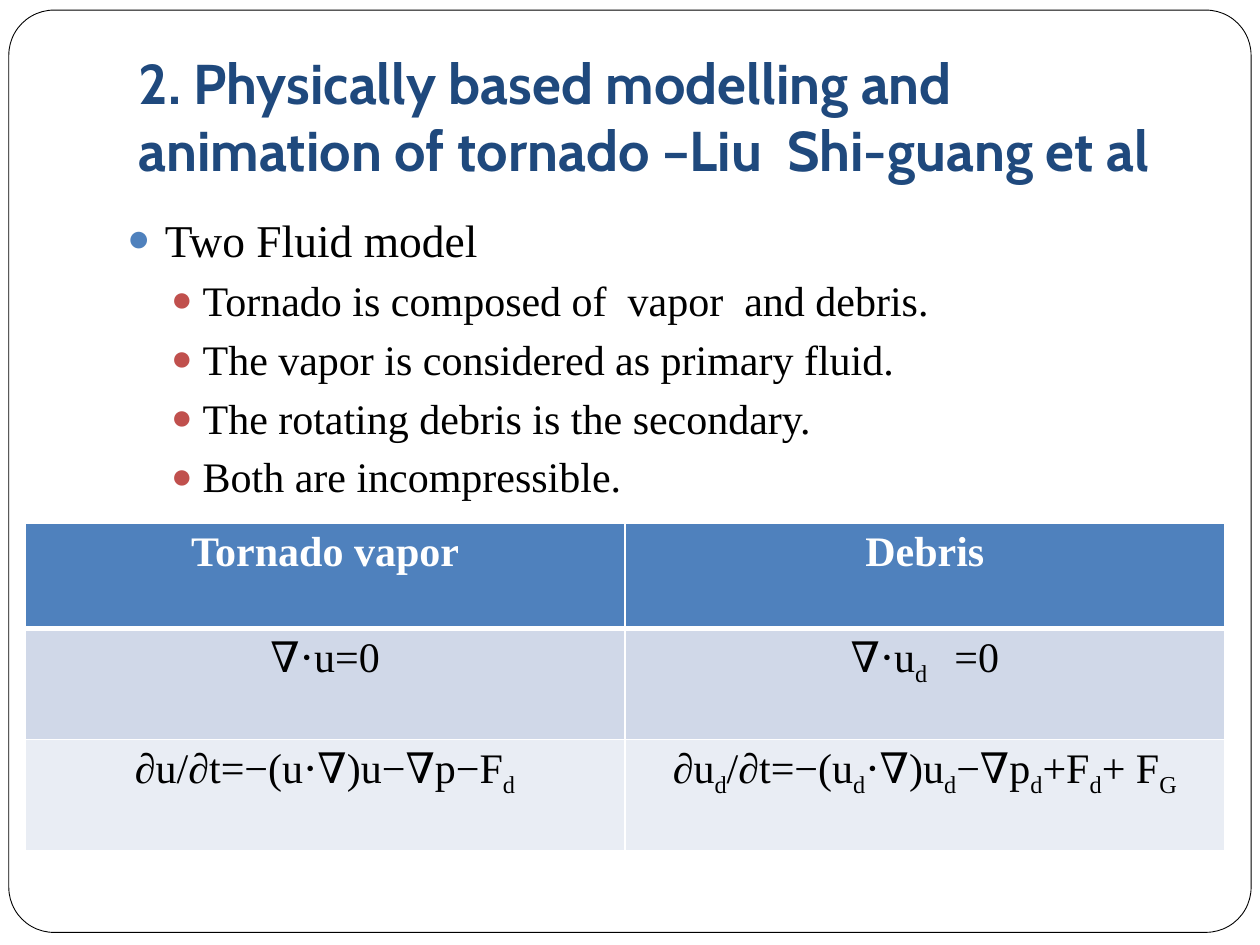
from lxml import etree
from pptx import Presentation
from pptx.dml.color import RGBColor
from pptx.enum.shapes import MSO_SHAPE
from pptx.enum.text import MSO_ANCHOR, PP_ALIGN
from pptx.oxml.ns import qn
from pptx.util import Inches, Pt

ROUND = MSO_SHAPE.ROUNDED_RECTANGLE
BOTTOM = MSO_ANCHOR.BOTTOM
LEFT, CENTER = PP_ALIGN.LEFT, PP_ALIGN.CENTER
HEAD, BODY = "Cabin", "Times New Roman"
COLORS = {
    "navy": "1F497D", "blue": "4F81BD", "red": "C0504D", "pale": "D0D8E8",
    "mist": "E9EDF4", "white": "FFFFFF", "black": "000000",
}

# Content
TITLE = "2. Physically based modelling and animation of tornado –Liu  Shi-guang et al"
POINTS = [
    (0, "Two Fluid model"),
    (1, "Tornado is composed of  vapor  and debris."),
    (1, "The vapor is considered as primary fluid."),
    (1, "The rotating debris is the secondary."),
    (1, "Both are incompressible."),
]
# level: (left indent, hanging indent, size, bullet colour)
LEVELS = [(0.3, 0.3, 26, "blue"), (0.6, 0.25, 24, "red")]
# Every second run of a cell is a subscript
CELLS = [
    [["Tornado vapor"], ["Debris"]],
    [["∇⋅u=0"], ["∇⋅u", "d ", "  =0"]],
    [["∂u/∂t=−(u⋅∇)u−∇p−F", "d"],
     ["∂u", "d", "/∂t=−(u", "d", "⋅∇)u", "d", "−∇p", "d", "+F", "d", "+ F", "G"]],
]
FILLS = ["blue", "pale", "mist"]
ROWS = [0.84, 0.88, 0.88]


def rgb(name):
    return RGBColor.from_string(COLORS[name])


def add_run(para, text, face, size, color, bold=False):
    run = para.add_run()
    run.text = text
    font = run.font
    font.name, font.size, font.bold = face, Pt(size), bold
    font.color.rgb = rgb(color)
    return run


def add_bullet(para, left, hang, color):
    props = para._p.get_or_add_pPr()
    props.set("marL", str(Inches(left)))
    props.set("indent", str(-Inches(hang)))
    tint = etree.SubElement(props, qn("a:buClr"))
    etree.SubElement(tint, qn("a:srgbClr"), val=COLORS[color])
    etree.SubElement(props, qn("a:buSzPct"), val="85000")
    etree.SubElement(props, qn("a:buFont"), typeface=BODY)
    etree.SubElement(props, qn("a:buChar"), char="●")


def set_edges(cell, low):
    props = cell._tc.get_or_add_tcPr()
    widths = [("lnL", 1), ("lnR", 1), ("lnT", 1), ("lnB", low)]
    for spot, (tag, width) in enumerate(widths):
        line = etree.Element(qn(f"a:{tag}"), w=str(Pt(width)))
        fill = etree.SubElement(line, qn("a:solidFill"))
        etree.SubElement(fill, qn("a:srgbClr"), val=COLORS["white"])
        props.insert(spot, line)


deck = Presentation()
deck.slide_width, deck.slide_height = Inches(10), Inches(7.5)
slide = deck.slides.add_slide(deck.slide_layouts[5])
shapes = slide.shapes

# Rounded frame, behind the title
frame = shapes.add_shape(ROUND, Inches(0.07), Inches(0.08), Inches(9.86), Inches(7.32))
frame.adjustments[0] = 0.049
frame.shadow.inherit = False
frame.fill.solid()
frame.fill.fore_color.rgb = rgb("white")
frame.line.color.rgb = rgb("black")
frame.line.width = Pt(0.5)
shapes.title._element.addprevious(frame._element)

# Title
title = shapes.title
title.left, title.top = Inches(1), Inches(0.3)
title.width, title.height = Inches(8.5), Inches(1.25)
text = title.text_frame
text.word_wrap = True
text.vertical_anchor = BOTTOM
text.margin_bottom = Inches(0.1)
text.paragraphs[0].alignment = LEFT
add_run(text.paragraphs[0], TITLE, HEAD, 32, "navy", True)

# Bullet list
box = shapes.add_textbox(Inches(0.91), Inches(1.63), Inches(8.59), Inches(2.35))
text = box.text_frame
text.word_wrap = True
for i, (level, words) in enumerate(POINTS):
    para = text.add_paragraph() if i else text.paragraphs[0]
    left, hang, size, color = LEVELS[level]
    para.level = level
    add_bullet(para, left, hang, color)
    if i:
        para.space_before = Pt(4.8)
    add_run(para, words, BODY, size, "black")

# Table of equations
table = shapes.add_table(len(CELLS), 2, Inches(0.2), Inches(4.15),
                         Inches(9.52), Inches(sum(ROWS))).table
for col in table.columns:
    col.width = Inches(4.76)
for i, cells in enumerate(CELLS):
    table.rows[i].height = Inches(ROWS[i])
    top = i == 0
    for j, parts in enumerate(cells):
        cell = table.cell(i, j)
        cell.fill.solid()
        cell.fill.fore_color.rgb = rgb(FILLS[i])
        set_edges(cell, 3 if top else 1)
        para = cell.text_frame.paragraphs[0]
        para.alignment = CENTER
        for k, part in enumerate(parts):
            run = add_run(para, part, BODY, 24, "white" if top else "black", top)
            if k % 2:
                run._r.get_or_add_rPr().set("baseline", "-25000")

deck.save("out.pptx")
